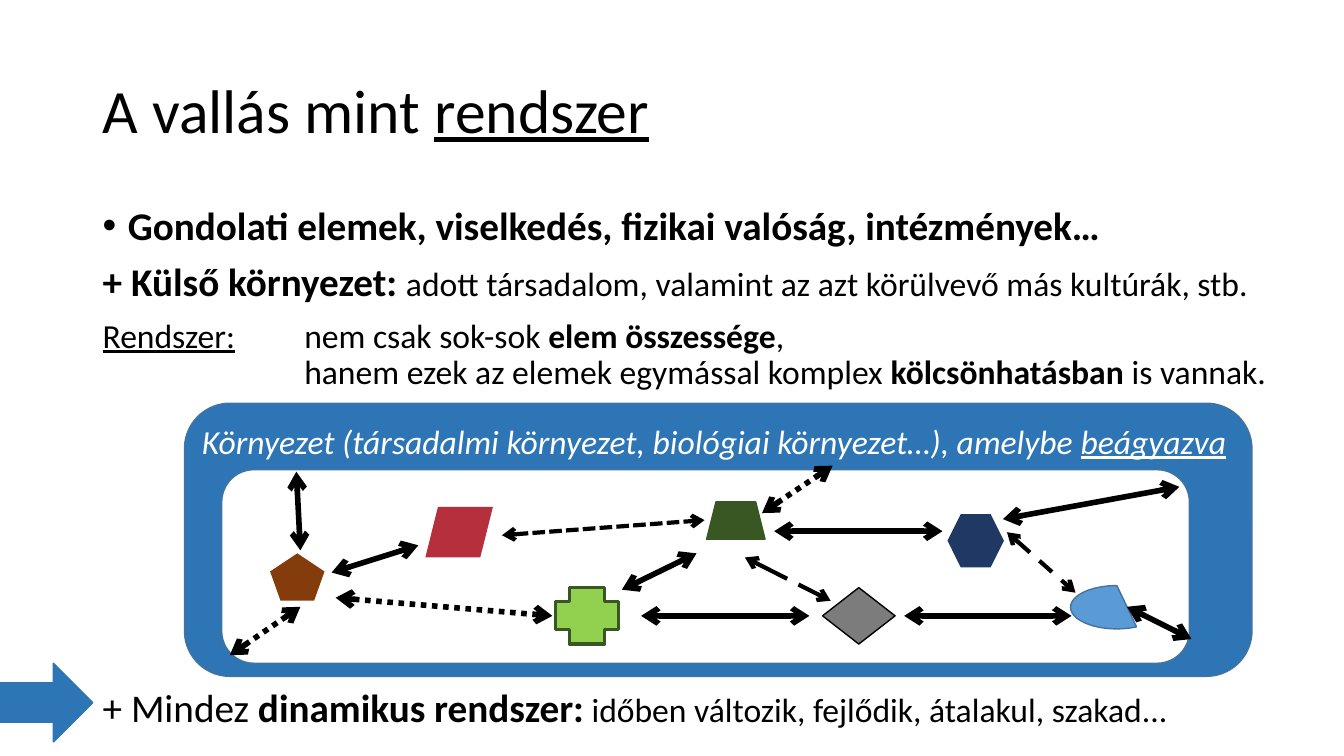
from lxml.etree import SubElement
from pptx import Presentation
from pptx.dml.color import RGBColor
from pptx.enum.dml import MSO_LINE
from pptx.enum.shapes import MSO_CONNECTOR, MSO_SHAPE
from pptx.enum.text import MSO_ANCHOR, PP_ALIGN
from pptx.oxml.ns import qn
from pptx.util import Inches, Pt

COLORS = {
    "black": "000000", "white": "FFFFFF", "blue": "2E75B6", "edge": "43739E",
    "brown": "843C0C", "navy": "203864", "lime": "92D050", "green": "385723",
    "sky": "5B9BD5", "red": "B52F3C", "gray": "7C7C7C",
}
FONT = "Calibri"
WIDE, HIGH = 133.33, 75

ITEMS = [
    (MSO_SHAPE.REGULAR_PENTAGON, (8.5, 14.9, 5.4, 4.7), "brown", None, 0),
    (MSO_SHAPE.HEXAGON, (75.7, 11, 5.6, 5.3), "navy", None, 0),
    (MSO_SHAPE.CROSS, (36.8, 18.3, 6.3, 5.6), "lime", "green", 2.25),
    (MSO_SHAPE.TRAPEZOID, (51.8, 9.8, 5.8, 3.7), "green", "green", 1),
    (MSO_SHAPE.CHORD, (87.9, 18.1, 9.2, 4.3), "sky", "edge", 1),
    (MSO_SHAPE.PARALLELOGRAM, (23.9, 10.3, 6.7, 5), "red", None, 0),
    (MSO_SHAPE.DIAMOND, (63.3, 18.3, 7.2, 5.6), "gray", "black", 1),
]
LINKS = [
    (45.3, 21.1, 62, 21.1, 4, None),
    (58.5, 12.7, 75.2, 12.7, 4, None),
    (31.5, 13.1, 51.6, 11.6, 3, MSO_LINE.SQUARE_DOT),
    (14.6, 16.8, 23.2, 14.1, 4, None),
    (11.5, 14.6, 11.1, 6.8, 4, None),
    (15, 19.3, 36.5, 21.1, 4, MSO_LINE.ROUND_DOT),
    (71.4, 21.1, 88, 21.1, 4, None),
    (43.4, 18.5, 50.8, 14.9, 4, None),
    (55.6, 15.3, 64.1, 19.6, 3, MSO_LINE.LONG_DASH),
    (81.6, 12.8, 88.4, 18.8, 3, MSO_LINE.DASH),
    (81.2, 11.5, 98.7, 8.3, 4, None),
    (4.5, 25, 11.5, 20.2, 4, MSO_LINE.ROUND_DOT),
    (99.9, 23.4, 93.5, 20.2, 4, None),
    (57.3, 10.9, 64.3, 6.2, 4, MSO_LINE.ROUND_DOT),
]


def grid(*cells):
    """Turn grid cells of a tenth of an inch into slide lengths."""
    return [Inches(cell / 10) for cell in cells]


def tint(name):
    """Look up a colour by name."""
    return RGBColor.from_string(COLORS[name])


def write(para, runs, color="black"):
    """Fill a paragraph with (text, size, format) runs; None is a line break."""
    for part in runs:
        if part is None:
            para.add_line_break()
            continue
        text, size, look = part
        run = para.add_run()
        run.text = text
        run.font.color.rgb = tint(color)
        for key, value in {"name": FONT, "size": Pt(size), **look}.items():
            setattr(run.font, key, value)


def label(slide, box, paras, anchor=MSO_ANCHOR.TOP):
    """Add a text box of (runs, left margin, bullet) paragraphs."""
    frame = slide.shapes.add_textbox(*grid(*box)).text_frame
    frame.word_wrap = True
    frame.vertical_anchor = anchor
    for num, (runs, left, bullet) in enumerate(paras):
        para = frame.add_paragraph() if num else frame.paragraphs[0]
        para.line_spacing = 0.9
        para.space_before = Pt(10 if num else 0)
        props = para._p.get_or_add_pPr()
        if left:
            props.set("marL", str(Inches(left)))
            props.set("indent", str(-Inches(left)))
        if bullet:
            SubElement(props, qn("a:buFont")).set("typeface", "Arial")
            SubElement(props, qn("a:buChar")).set("char", bullet)
        write(para, runs)


def draw(slide, kind, box, fill, edge=None, width=1):
    """Add a filled preset shape, with an outline if an edge is named."""
    shape = slide.shapes.add_shape(kind, *grid(*box))
    shape.shadow.inherit = False
    shape.fill.solid()
    shape.fill.fore_color.rgb = tint(fill)
    if edge:
        shape.line.color.rgb = tint(edge)
        shape.line.width = Pt(width)
    else:
        shape.line.fill.background()
    return shape


def link(slide, ends, width, dash):
    """Add a two-headed arrow."""
    line = slide.shapes.add_connector(MSO_CONNECTOR.STRAIGHT, *grid(*ends))
    line.line.color.rgb = tint("black")
    line.line.width = Pt(width)
    if dash:
        line.line.dash_style = dash
    for tag in ("a:headEnd", "a:tailEnd"):
        SubElement(line.line._get_or_add_ln(), qn(tag)).set("type", "arrow")
    SubElement(line._element.spPr, qn("a:effectLst"))


def header(slide, box):
    """Write the slide title."""
    runs = [("A vallás mint ", 44, {}), ("rendszer", 44, {"underline": True})]
    label(slide, box, [(runs, 0, None)], MSO_ANCHOR.MIDDLE)


def body(slide, box):
    """Write the points above the diagram."""
    bold = {"bold": True}
    label(slide, box, [
        ([("Gondolati elemek, viselkedés, fizikai valóság, intézmények…", 28, bold)], 0.25, "•"),
        ([("+ Külső környezet: ", 28, bold),
          ("adott társadalom, valamint az azt körülvevő más kultúrák, stb.", 24, {})], 0, None),
        ([("Rendszer:", 24, {"underline": True}),
          ("\tnem csak sok-sok ", 24, {}), ("elem összessége", 24, bold), (", ", 24, {}),
          None,
          ("hanem ezek az elemek egymással komplex ", 24, {}),
          ("kölcsönhatásban", 24, bold), (" is vannak.", 24, {})], 2, None),
    ])


def system(slide, box):
    """Draw the environment with its linked elements."""
    left, top, wide, high = box
    frame = draw(slide, MSO_SHAPE.ROUNDED_RECTANGLE, box, "blue", "edge").text_frame
    inset = Inches(0.04)
    for key, value in {"margin_left": inset, "margin_right": inset, "margin_top": inset,
                       "margin_bottom": inset, "word_wrap": True,
                       "vertical_anchor": MSO_ANCHOR.TOP}.items():
        setattr(frame, key, value)
    para = frame.paragraphs[0]
    para.alignment = PP_ALIGN.LEFT
    write(para, [
        ("Környezet (társadalmi környezet, biológiai környezet…), amelybe ", 24, {"italic": True}),
        ("beágyazva", 24, {"italic": True, "underline": True}),
    ], "white")
    draw(slide, MSO_SHAPE.ROUNDED_RECTANGLE,
         (left + 3.7, top + 6.6, wide - 9.9, high - 7.9), "white", "edge")
    for kind, (x, y, w, h), fill, edge, width in ITEMS:
        draw(slide, kind, (left + x, top + y, w, h), fill, edge, width)
    for x, y, end, base, width, dash in LINKS:
        link(slide, (left + x, top + y, left + end, top + base), width, dash)


def footer(slide, box):
    """Write the closing point with the arrow that leads to it."""
    left, top, wide, high = box
    label(slide, box, [([
        ("+ Mindez ", 28, {}), ("dinamikus rendszer:", 28, {"bold": True}),
        (" időben változik, fejlődik, átalakul, szakad...", 24, {}),
    ], 0, None)])
    draw(slide, MSO_SHAPE.RIGHT_ARROW, (left - 11.2, top - 2, 11.2, 7.8), "blue", "blue")


def main():
    """Build and save the slide."""
    deck = Presentation()
    deck.slide_width, deck.slide_height = grid(WIDE, HIGH)
    slide = deck.slides.add_slide(deck.slide_layouts[6])
    header(slide, (9.2, 4, 115, 14.5))
    body(slide, (9.2, 20, 121.8, 20))
    system(slide, (18.3, 40, 105.9, 27.1))
    footer(slide, (9.2, 67.8, 121.8, 5.9))
    deck.save("out.pptx")


if __name__ == "__main__":
    main()
